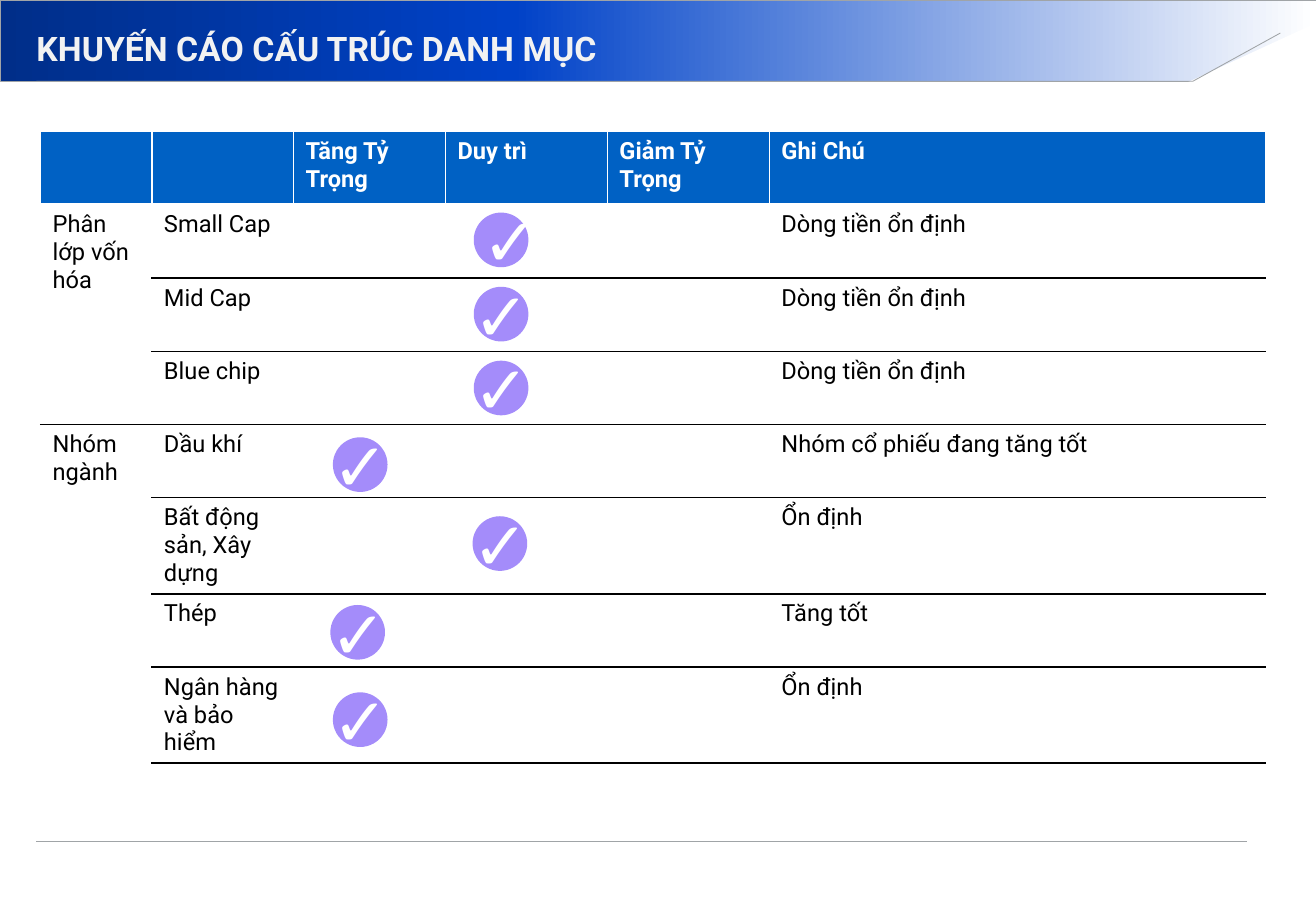
from copy import deepcopy

from lxml import etree
from pptx import Presentation
from pptx.dml.color import RGBColor
from pptx.enum.shapes import MSO_CONNECTOR, MSO_SHAPE
from pptx.enum.text import MSO_ANCHOR, MSO_AUTO_SIZE, PP_ALIGN
from pptx.oxml.ns import qn
from pptx.util import Pt

LEFT, CENTER = PP_ALIGN.LEFT, PP_ALIGN.CENTER
MIDDLE = MSO_ANCHOR.MIDDLE
NO_AUTOFIT, GROW = MSO_AUTO_SIZE.NONE, MSO_AUTO_SIZE.SHAPE_TO_FIT_TEXT
RECTANGLE, OVAL = MSO_SHAPE.RECTANGLE, MSO_SHAPE.OVAL
STRAIGHT = MSO_CONNECTOR.STRAIGHT

HEADINGS = ["", "", "Tăng Tỷ Trọng", "Duy trì", "Giảm Tỷ Trọng", "Ghi Chú"]
GROUPS = [
    ("Phân lớp vốn hóa", [
        ("Small Cap", "Dòng tiền ổn định"),
        ("Mid Cap", "Dòng tiền ổn định"),
        ("Blue chip", "Dòng tiền ổn định")]),
    ("Nhóm ngành", [
        ("Dầu khí", "Nhóm cổ phiếu đang tăng tốt"),
        ("Bất động sản, Xây dựng", "Ổn định"),
        ("Thép", "Tăng tốt"),
        ("Ngân hàng và bảo hiểm", "Ổn định")]),
]
COLUMN_WIDTHS = [66, 84, 90, 96, 96, 294]
ROW_HEIGHTS = [43.4] * 5 + [57, 43.4, 57]
# Left and top of each disc, and how far its tick sits to the right of centre
TICKS = [(280.8, 126, 5.6), (280.8, 170, 0.4), (280.8, 213.8, 0.4),
         (197.3, 259.2, 0.4), (280.1, 306, 0.4), (195.8, 358.6, 0.4),
         (197.3, 410.4, 0.4)]


def color(hex_code):
    return RGBColor.from_string(hex_code)


def write(frame, text, size=14, font="Roboto", ink="000000", bold=False, align=LEFT):
    paragraph = frame.paragraphs[0]
    paragraph.alignment = align
    run = paragraph.add_run()
    run.text = text
    run.font.size, run.font.name, run.font.bold = Pt(size), font, bold
    run.font.color.rgb = color(ink)


class PortfolioSlide:
    blue, white, black = "0061C4", "FFFFFF", "000000"
    gray, violet = "A0A4A7", "A48CFA"

    def __init__(self, deck):
        self.slide = deck.slides.add_slide(deck.slide_layouts[5])
        self.shapes = self.slide.shapes

    def outline(self, shape):
        shape.line.color.rgb = color(self.gray)
        shape.line.width = Pt(0.5)

    def band(self, width, height, stops):
        band = self.shapes.add_shape(RECTANGLE, 0, 0, Pt(width), Pt(height))
        band.shadow.inherit = False
        self.outline(band)
        band.fill.gradient()
        band.fill.gradient_angle = 0
        stop_list = band.element.find(".//" + qn("a:gsLst"))
        stop_list.append(deepcopy(stop_list[0]))
        for stop, (position, hex_code) in zip(band.fill.gradient_stops, stops):
            stop.position = position
            stop.color.rgb = color(hex_code)

    def polygon(self, points, fill=None):
        """Draw a filled closed outline, or an open grey line without fill."""
        builder = self.shapes.build_freeform(*map(Pt, points[0]), scale=1.0)
        builder.add_line_segments([(Pt(x), Pt(y)) for x, y in points[1:]],
                                  close=fill is not None)
        shape = builder.convert_to_shape()
        shape.shadow.inherit = False
        if fill:
            shape.fill.solid()
            shape.fill.fore_color.rgb = color(fill)
            shape.line.fill.background()
        else:
            shape.fill.background()
            self.outline(shape)

    def rule(self, x1, x2, y):
        rule = self.shapes.add_connector(STRAIGHT, Pt(x1), Pt(y), Pt(x2), Pt(y))
        self.outline(rule)
        etree.SubElement(rule.element.spPr, qn("a:effectLst"))

    def title(self, text, left, top, width, height):
        title = self.shapes.title
        title.left, title.top = Pt(left), Pt(top)
        title.width, title.height = Pt(width), Pt(height)
        frame = title.text_frame
        frame.margin_left = frame.margin_right = 0
        frame.margin_top = frame.margin_bottom = 0
        frame.vertical_anchor, frame.auto_size = MIDDLE, NO_AUTOFIT
        write(frame, text, size=20, ink="F2F2F2", bold=True)
        self.shapes[-1].element.addnext(title.element)

    def borders(self, cell, top, bottom):
        properties = cell._tc.get_or_add_tcPr()
        sides = {"L": (self.white, 1), "R": (self.white, 1), "T": top, "B": bottom}
        for side, (hex_code, width) in sides.items():
            line = etree.SubElement(properties, qn(f"a:ln{side}"), w=str(Pt(width)))
            fill = etree.SubElement(line, qn("a:solidFill"))
            etree.SubElement(fill, qn("a:srgbClr"), val=hex_code)

    def table(self, left, top):
        frame = self.shapes.add_table(
            len(ROW_HEIGHTS), len(COLUMN_WIDTHS), Pt(left), Pt(top),
            Pt(sum(COLUMN_WIDTHS)), Pt(sum(ROW_HEIGHTS)))
        table = frame.table
        table.first_row = table.horz_banding = False
        for column, width in zip(table.columns, COLUMN_WIDTHS):
            column.width = Pt(width)
        for row, height in zip(table.rows, ROW_HEIGHTS):
            row.height = Pt(height)

        for column, heading in enumerate(HEADINGS):
            cell = table.cell(0, column)
            self.borders(cell, (self.white, 1), (self.white, 3))
            cell.fill.solid()
            cell.fill.fore_color.rgb = color(self.blue)
            if heading:
                write(cell.text_frame, heading, ink=self.white, bold=True)

        first = 1
        for group, entries in GROUPS:
            last = first + len(entries) - 1
            for row, (name, note) in enumerate(entries, first):
                self.body_row(table, row, first, last, name, note)
            table.cell(first, 0).merge(table.cell(last, 0))
            write(table.cell(first, 0).text_frame, group)
            first = last + 1

    def body_row(self, table, row, first, last, name, note):
        black, white = (self.black, 1), (self.white, 1)
        final = len(ROW_HEIGHTS) - 1
        for column in range(len(COLUMN_WIDTHS)):
            cell = table.cell(row, column)
            top = white if row == 1 or (column == 0 and row > first) else black
            bottom = white if column == 0 and (row < last or row == final) else black
            self.borders(cell, top, bottom)
            cell.fill.background()
        write(table.cell(row, 1).text_frame, name)
        write(table.cell(row, 5).text_frame, note)

    def tick(self, left, top, shift):
        disc_size, box_width, box_height = 32.4, 54.7, 55.4
        group = self.shapes.add_group_shape().shapes
        disc = group.add_shape(OVAL, Pt(left), Pt(top), Pt(disc_size), Pt(disc_size))
        disc.shadow.inherit = False
        disc.fill.solid()
        disc.fill.fore_color.rgb = color(self.violet)
        disc.line.fill.background()
        mark = group.add_textbox(
            Pt(left + (disc_size - box_width) / 2 + shift),
            Pt(top + (disc_size - box_height) / 2), Pt(box_width), Pt(box_height))
        frame = mark.text_frame
        frame.word_wrap, frame.auto_size = False, GROW
        frame.vertical_anchor = MIDDLE
        write(frame, "✓", size=40, font="Arial", ink=self.white, align=CENTER)


def main():
    deck = Presentation()
    deck.slide_width, deck.slide_height = Pt(780), Pt(540)
    page = PortfolioSlide(deck)
    page.band(780, 48.2, [(0, "002E89"), (0.39, "0042C8"), (1, "FFFFFF")])
    page.polygon([(702, 49.7), (780, 49.7), (780, 13.7)], fill=page.white)
    page.polygon([(21.6, 48.2), (707, 48.2), (758.9, 19.6)])
    page.rule(21.6, 739.4, 498.7)
    page.title("KHUYẾN CÁO CẤU TRÚC DANH MỤC", 21.6, 13, 682, 31)
    page.table(24, 78)
    for left, top, shift in TICKS:
        page.tick(left, top, shift)
    deck.save("out.pptx")


if __name__ == "__main__":
    main()
